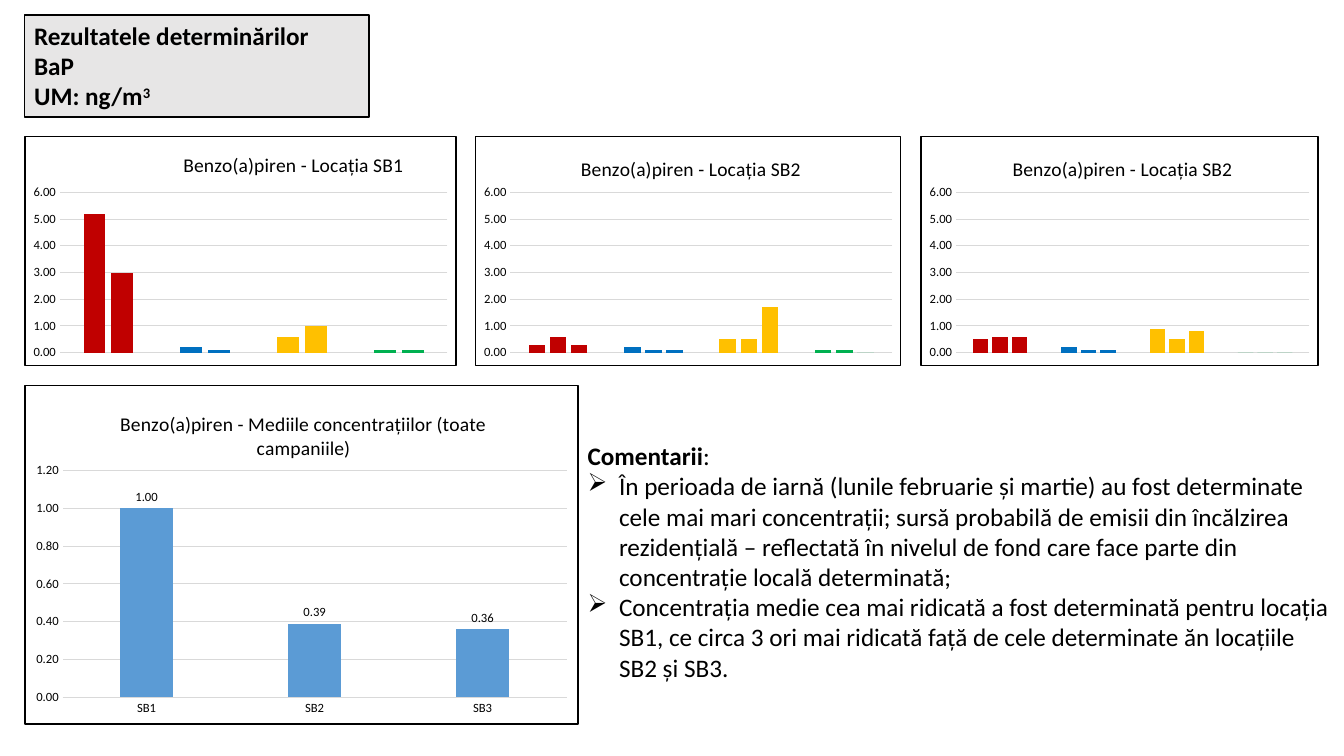
from lxml import etree
from pptx import Presentation
from pptx import util as u
from pptx.chart.data import CategoryChartData
from pptx.dml.color import RGBColor
from pptx.enum import chart as charts, shapes, text
from pptx.oxml import ns, parse_xml

Pt = u.Pt
FONT = "Calibri"
BLACK, WHITE, GRID, BLUE = "000000", "FFFFFF", "D9D9D9", "5B9BD5"
SEASONS = ["C00000", "0070C0", "FFC000", "00B050"]
LOCATIONS = [
    dict(title="Benzo(a)piren - Locația SB1", box=(17.3, 97.2, 308.9, 164.2), title_at=(111, 8),
         series=[(5.2, 0.2, 0.6, 0.1), (3, 0.1, 1, 0.1)]),
    dict(title="Benzo(a)piren - Locația SB2", box=(339.1, 97.2, 304.6, 164.2), title_at=(73, 11),
         series=[(0.3, 0.2, 0.5, 0.1), (0.6, 0.1, 0.5, 0.1), (0.3, 0.1, 1.7, 0)]),
    dict(title="Benzo(a)piren - Locația SB2", box=(657.4, 97.2, 284.4, 164.2), title_at=(63, 11),
         series=[(0.5, 0.2, 0.9, 0), (0.6, 0.1, 0.5, 0), (0.6, 0.1, 0.8, 0)]),
]
COMMENTS = [
    "În perioada de iarnă (lunile februarie și martie) au fost determinate cele mai mari concentrații; "
    "sursă probabilă de emisii din încălzirea rezidențială – reflectată în nivelul de fond care face "
    "parte din concentrație locală determinată;",
    "Concentrația medie cea mai ridicată a fost determinată pentru locația SB1, ce circa 3 ori mai "
    "ridicată față de cele determinate ăn locațiile SB2 și SB3.",
]


def color(value):
    """Turn a hex string into a colour."""
    return RGBColor.from_string(value)


def paint(fill, value):
    """Give a fill one solid colour."""
    fill.solid()
    fill.fore_color.rgb = color(value)


def draw_line(line, value, width):
    """Set the colour and width of a line."""
    line.color.rgb = color(value)
    line.width = Pt(width)


def style_font(font, size, bold=False):
    """Set the typeface, size and weight in black."""
    font.name, font.size, font.bold = FONT, Pt(size), bold
    font.color.rgb = color(BLACK)


def add_span(para, words, size=18, bold=False, raised=False):
    """Append formatted words to a paragraph."""
    span = para.add_run()
    span.text = words
    style_font(span.font, size, bold)
    if raised:
        span.font._element.set("baseline", "30000")


def add_bullet(para, mark="➢", indent=22.5):
    """Hang a paragraph behind a bullet mark."""
    properties = para._p.get_or_add_pPr()
    properties.set("marL", str(Pt(indent)))
    properties.set("indent", str(-Pt(indent)))
    etree.SubElement(properties, ns.qn("a:buChar")).set("char", mark)


def place(parent, index, target=None, **shares):
    """Position a chart part by shares of the chart size."""
    for old in parent.findall(ns.qn("c:layout")):
        parent.remove(old)
    layout = etree.Element(ns.qn("c:layout"))
    manual = etree.SubElement(layout, ns.qn("c:manualLayout"))
    settings = dict(xMode="edge", yMode="edge", **shares)
    if target:
        settings = dict(layoutTarget=target, **settings)
    for name, value in settings.items():
        share = value if isinstance(value, str) else f"{value:.4f}"
        etree.SubElement(manual, ns.qn("c:" + name)).set("val", share)
    parent.insert(index, layout)


def frame_chart(chart):
    """Give the chart a white ground and a black border."""
    frame = parse_xml(
        f'<c:spPr {ns.nsdecls("c", "a")}><a:solidFill><a:srgbClr val="{WHITE}"/></a:solidFill>'
        f'<a:ln w="{Pt(1)}"><a:solidFill><a:srgbClr val="{BLACK}"/></a:solidFill></a:ln></c:spPr>')
    chart._chartSpace.find(ns.qn("c:chart")).addnext(frame)


def style_axes(chart, top, step):
    """Format the value axis and its gridlines."""
    axis = chart.value_axis
    axis.minimum_scale, axis.maximum_scale, axis.major_unit = 0, top, step
    axis.major_tick_mark = charts.XL_TICK_MARK.NONE
    axis.format.line.fill.background()
    draw_line(axis.major_gridlines.format.line, GRID, 0.75)
    axis.tick_labels.number_format = "0.00"
    axis.tick_labels.number_format_is_linked = False
    style_font(axis.tick_labels.font, 9)


def add_columns(page, title, box, title_at, series, categories, margins, top, step):
    """Add a framed, titled column chart and return it."""
    data = CategoryChartData(number_format="0.00")
    data.categories = categories
    for number, values in enumerate(series, 1):
        data.add_series(f"Series {number}", values)
    chart = page.shapes.add_chart(
        charts.XL_CHART_TYPE.COLUMN_CLUSTERED, *map(Pt, box), data).chart
    style_font(chart.font, 10)
    chart.has_legend = False
    plot = chart.plots[0]
    plot.gap_width, plot.overlap, plot.vary_by_categories = 219, -27, False
    frame_chart(chart)
    style_axes(chart, top, step)
    heading = chart.chart_title.text_frame
    for index, words in enumerate(title.split("\n")):
        para = heading.add_paragraph() if index else heading.paragraphs[0]
        add_span(para, words, 14)
    width, height = box[2:]
    left, above, right, below = margins
    place(chart.chart_title._element, 1, x=title_at[0] / width, y=title_at[1] / height)
    place(chart._chartSpace.chart.plotArea, 0, "inner", x=left / width, y=above / height,
          w=1 - (left + right) / width, h=1 - (above + below) / height)
    return chart


def add_location(page, **details):
    """Add the chart of one location, coloured by season."""
    chart = add_columns(page, categories=["1", "2", "3", "4"], margins=(25, 40, 6, 9),
                        top=6, step=1, **details)
    chart.category_axis.visible = False
    for series in chart.plots[0].series:
        for index, season in enumerate(SEASONS):
            paint(series.points[index].format.fill, season)


def add_means(page):
    """Add the labelled chart of mean concentrations."""
    chart = add_columns(
        page, "Benzo(a)piren - Mediile concentrațiilor (toate\ncampaniile)", (17.3, 275, 396, 242.6),
        (66, 16), [(1, 0.39, 0.36)], ["SB1", "SB2", "SB3"], (27, 61, 8, 19), 1.2, 0.2)
    axis = chart.category_axis
    axis.major_tick_mark = charts.XL_TICK_MARK.NONE
    draw_line(axis.format.line, GRID, 0.75)
    style_font(axis.tick_labels.font, 9)
    series = chart.plots[0].series[0]
    paint(series.format.fill, BLUE)
    labels = series.data_labels
    labels.show_value = True
    labels.number_format, labels.number_format_is_linked = "0.00", False
    labels.position = charts.XL_LABEL_POSITION.OUTSIDE_END
    style_font(labels.font, 9)


def add_heading(page):
    """Add the grey heading box."""
    box = page.shapes.add_shape(shapes.MSO_SHAPE.RECTANGLE, Pt(17.3), Pt(10.8), Pt(246.2), Pt(72.7))
    box.shadow.inherit = False
    paint(box.fill, "E7E6E6")
    draw_line(box.line, BLACK, 1)
    frame = box.text_frame
    frame.word_wrap = True
    frame.vertical_anchor = text.MSO_ANCHOR.TOP
    for index, words in enumerate(["Rezultatele determinărilor", "BaP", "UM: ng/m"]):
        para = frame.add_paragraph() if index else frame.paragraphs[0]
        para.alignment = text.PP_ALIGN.LEFT
        add_span(para, words, bold=True)
    add_span(para, "3", bold=True, raised=True)


def add_comments(page):
    """Add the bulleted comments."""
    frame = page.shapes.add_textbox(Pt(412.6), Pt(311), Pt(547.2), Pt(181.4)).text_frame
    frame.word_wrap = True
    add_span(frame.paragraphs[0], "Comentarii", bold=True)
    add_span(frame.paragraphs[0], ":")
    for comment in COMMENTS:
        para = frame.add_paragraph()
        add_bullet(para)
        add_span(para, comment)


def main():
    """Build and save the slide."""
    deck = Presentation()
    deck.slide_width, deck.slide_height = Pt(960), Pt(540)
    page = deck.slides.add_slide(deck.slide_layouts[6])
    add_heading(page)
    add_comments(page)
    for location in LOCATIONS:
        add_location(page, **location)
    add_means(page)
    deck.save("out.pptx")


if __name__ == "__main__":
    main()
